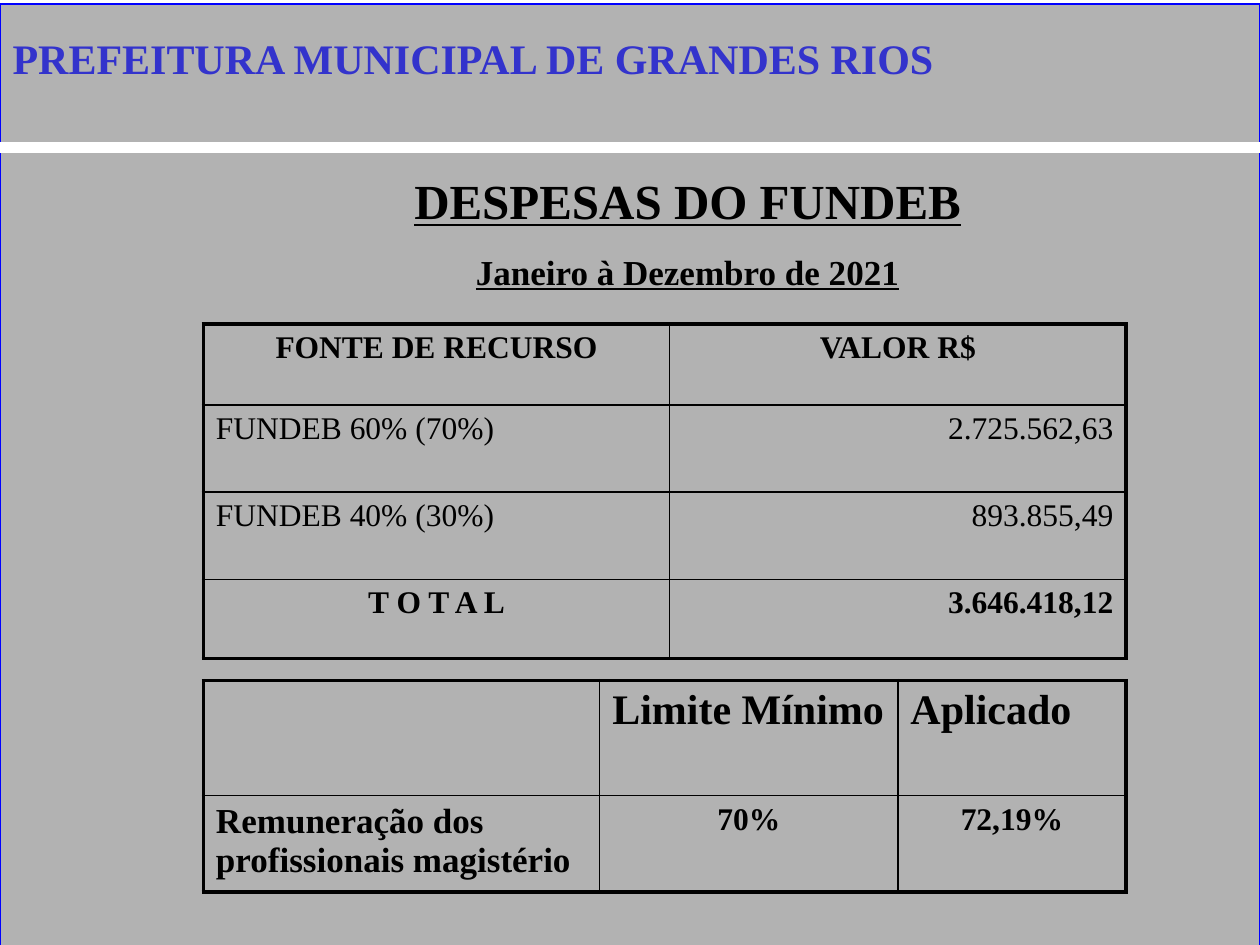
from lxml.etree import SubElement
from pptx import Presentation
from pptx.dml.color import RGBColor
from pptx.enum.shapes import MSO_CONNECTOR, MSO_SHAPE
from pptx.enum.text import MSO_ANCHOR, MSO_AUTO_SIZE, PP_ALIGN
from pptx.oxml import parse_xml
from pptx.oxml.ns import nsdecls, qn
from pptx.util import Cm, Pt

LEFT, CENTER, RIGHT = PP_ALIGN.LEFT, PP_ALIGN.CENTER, PP_ALIGN.RIGHT


def rgb(value):
    return RGBColor.from_string(value)


def write(p, text, size=18, bold=False, underline=False, color="000000",
          align=LEFT, spacing=1.0, font="Times New Roman"):
    p.alignment = align
    p.line_spacing = spacing
    p.space_before = Pt(0)
    r = p.add_run()
    r.text = text
    r.font.name = font
    r.font.size = Pt(size)
    r.font.bold = bold
    r.font.underline = underline
    r.font.color.rgb = rgb(color)
    return r


class Deck:
    background, frame, rule, heading = "B2B2B2", "0000FF", "FFFFFF", "3333CC"
    border, thin, thick = "000000", 1, 2.25

    def __init__(self):
        self.prs = Presentation()
        self.prs.slide_width, self.prs.slide_height = Cm(25.4), Cm(19.05)
        self.s = self.prs.slides.add_slide(self.prs.slide_layouts[1])

    def send_back(self, sp, position):
        tree = sp._element.getparent()
        tree.insert(2 + position, sp._element)

    def panel(self, x, y, w, h):
        sp = self.s.shapes.add_shape(MSO_SHAPE.RECTANGLE, Cm(x), Cm(y), Cm(w), Cm(h))
        sp.shadow.inherit = False
        sp.fill.solid()
        sp.fill.fore_color.rgb = rgb(self.background)
        sp.line.color.rgb = rgb(self.frame)
        sp.line.width = Pt(0.75)
        self.send_back(sp, 0)

    def divider(self, y, w):
        line = self.s.shapes.add_connector(MSO_CONNECTOR.STRAIGHT, 0, Cm(y), Cm(w), Cm(y))
        line.line.color.rgb = rgb(self.rule)
        line.line.width = Pt(6)
        SubElement(line._element.spPr, qn("a:effectLst"))
        self.send_back(line, 1)

    def placeholder(self, index, x, y, w, h):
        sp = self.s.placeholders[index]
        sp.left, sp.top, sp.width, sp.height = Cm(x), Cm(y), Cm(w), Cm(h)
        tf = sp.text_frame
        tf.word_wrap = True
        tf.auto_size = MSO_AUTO_SIZE.NONE
        tf.vertical_anchor = MSO_ANCHOR.TOP
        return tf

    def title(self, text, *box):
        tf = self.placeholder(0, *box)
        r = write(tf.paragraphs[0], text, size=24, bold=True, color=self.heading)
        # Text shadow, placed after the fill as the schema requires
        shadow = parse_xml(
            f'<a:effectLst {nsdecls("a")}><a:outerShdw dist="35921" dir="2700000">'
            '<a:srgbClr val="808080"/></a:outerShdw></a:effectLst>')
        r.font._element.find(qn("a:solidFill")).addnext(shadow)

    def body(self, lines, *box):
        tf = self.placeholder(1, *box)
        for i, (text, size) in enumerate(lines):
            p = tf.add_paragraph() if i else tf.paragraphs[0]
            write(p, text, size=size, bold=True, underline=True, align=CENTER, spacing=1.5)
            pPr = p._p.get_or_add_pPr()
            pPr.set("marL", str(Cm(1.27)))
            pPr.set("indent", str(-Cm(1.27)))
            SubElement(pPr, qn("a:buNone"))

    def borders(self, cell, outer):
        tcPr = cell._tc.get_or_add_tcPr()
        for i, (side, is_outer) in enumerate(zip("LRTB", outer)):
            width = Pt(self.thick if is_outer else self.thin)
            tcPr.insert(i, parse_xml(
                f'<a:ln{side} {nsdecls("a")} w="{width}"><a:solidFill>'
                f'<a:srgbClr val="{self.border}"/></a:solidFill></a:ln{side}>'))

    def table(self, x, y, widths, heights, rows):
        frame = self.s.shapes.add_table(len(heights), len(widths), Cm(x), Cm(y),
                                        Cm(sum(widths)), Cm(sum(heights)))
        tbl = frame.table
        tbl.first_row = tbl.horz_banding = False
        for col, width in zip(tbl.columns, widths):
            col.width = Cm(width)
        for row, height in zip(tbl.rows, heights):
            row.height = Cm(height)
        last_row, last_col = len(heights) - 1, len(widths) - 1
        for i, row in enumerate(rows):
            for j, (text, style) in enumerate(row):
                cell = tbl.cell(i, j)
                cell.fill.background()
                self.borders(cell, (j == 0, j == last_col, i == 0, i == last_row))
                if text:
                    write(cell.text_frame.paragraphs[0], text, **style)


def main():
    deck = Deck()

    # Background and header
    deck.panel(0, 0.08, 25.4, 19.05)
    deck.divider(2.97, 25.4)
    deck.title("PREFEITURA MUNICIPAL DE GRANDES RIOS", 0, 0.53, 24.1, 1.27)
    deck.body([("DESPESAS DO FUNDEB", 28), ("Janeiro à Dezembro de 2021", 20)],
              3.6, 2.72, 20.52, 14)

    # Cell styles
    head = dict(bold=True, align=CENTER)
    label, value = dict(align=LEFT), dict(align=RIGHT)
    total = dict(bold=True, align=RIGHT)
    large, medium = dict(size=24, bold=True), dict(size=20, bold=True)

    # Expenses by source
    deck.table(4.1, 6.53, (9.4, 9.2), (1.63, 1.76, 1.76, 1.6), [
        [("FONTE DE RECURSO", head), ("VALOR R$", head)],
        [("FUNDEB 60% (70%)", label), ("2.725.562,63", value)],
        [("FUNDEB 40% (30%)", label), ("893.855,49", value)],
        [("T O T A L", head), ("3.646.418,12", total)],
    ])

    # Minimum limit against applied share
    deck.table(4.1, 13.72, (7.99, 6.01, 4.6), (2.32, 1.94), [
        [("", large), ("Limite Mínimo", large), ("Aplicado", large)],
        [("Remuneração dos profissionais magistério", medium), ("70%", head), ("72,19%", head)],
    ])

    deck.prs.save("out.pptx")


if __name__ == "__main__":
    main()
